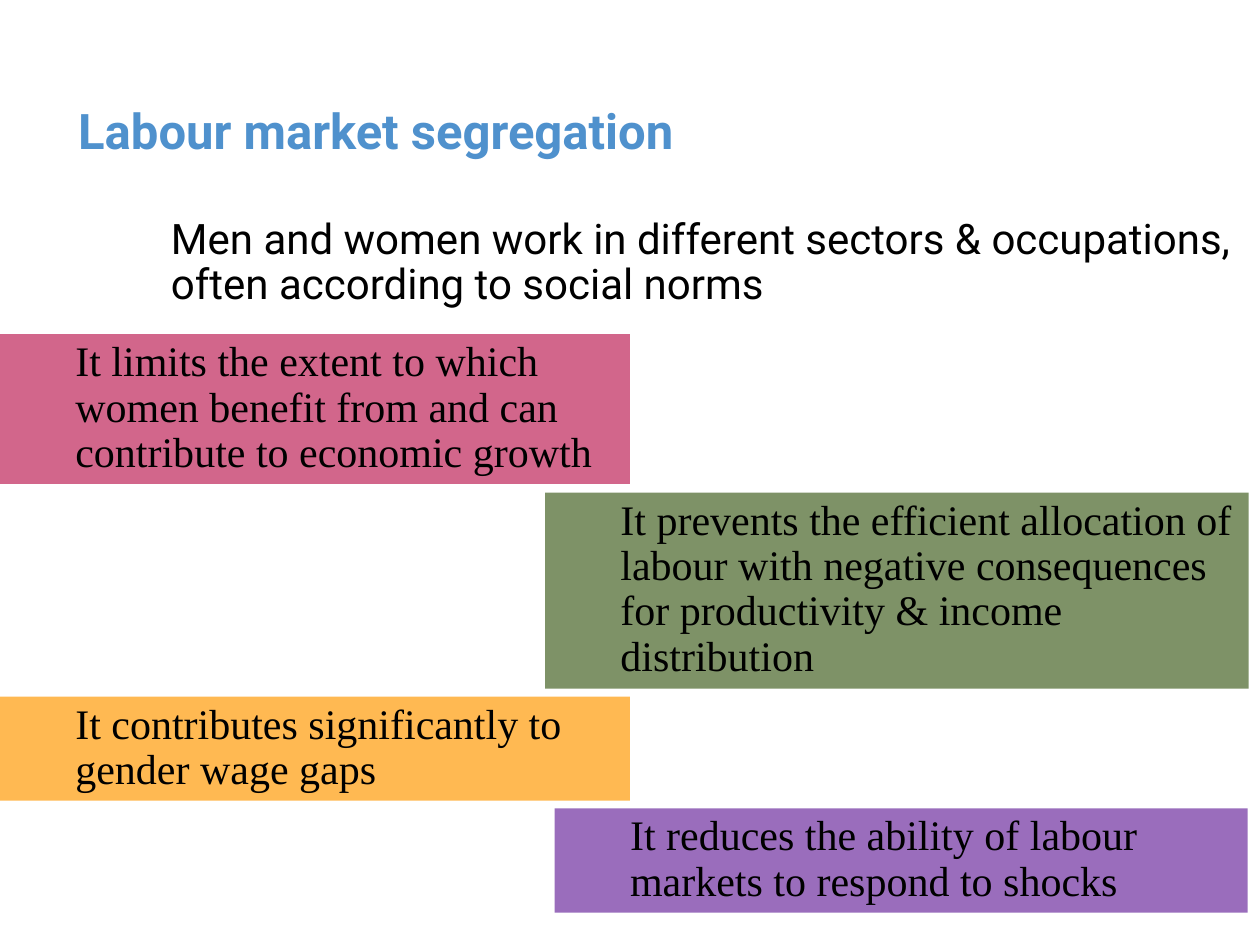
import pptx
import pptx.dml.color
import pptx.enum.shapes
import pptx.enum.text
import pptx.oxml.ns
import pptx.util
from lxml import etree

Pt = pptx.util.Pt
Anchor = pptx.enum.text.MSO_ANCHOR


def color(hex_string):
    return pptx.dml.color.RGBColor.from_string(hex_string)


def write_text(shape, text, font="Times New Roman", size=24, hex_color="000000",
               bold=False, level=0, left_margin=0, line_spacing=0.9,
               anchor=Anchor.TOP, auto_size=pptx.enum.text.MSO_AUTO_SIZE.NONE):
    frame = shape.text_frame
    frame.word_wrap = True
    frame.auto_size = auto_size
    frame.vertical_anchor = anchor
    paragraph = frame.paragraphs[0]
    paragraph.text = text
    paragraph.level = level
    paragraph.alignment = pptx.enum.text.PP_ALIGN.LEFT
    paragraph.line_spacing = line_spacing
    paragraph.space_before = Pt(0)
    properties = paragraph._p.get_or_add_pPr()
    properties.set("marL", str(Pt(left_margin)))
    properties.set("indent", "0")
    etree.SubElement(properties, pptx.oxml.ns.qn("a:buNone"))
    font_format = paragraph.runs[0].font
    font_format.name = font
    font_format.size = Pt(size)
    font_format.bold = bold
    font_format.color.rgb = color(hex_color)


presentation = pptx.Presentation()
presentation.slide_width = Pt(720)
presentation.slide_height = Pt(540)
slide = presentation.slides.add_slide(presentation.slide_layouts[1])

# Title
title = slide.shapes.title
title.left, title.top, title.width, title.height = Pt(37.5), Pt(29.5), Pt(648), Pt(90)
write_text(title, "Labour market segregation", font="Roboto", size=28,
           hex_color="4F91CD", bold=True, line_spacing=1.0, anchor=Anchor.MIDDLE)

# Introductory statement
body = slide.placeholders[1]
body.left, body.top, body.width, body.height = Pt(63.5), Pt(90.5), Pt(649.5), Pt(96)
body.text_frame.margin_top = Pt(34)
write_text(body, "Men and women work in different sectors & occupations, "
           "often according to social norms", font="Roboto", left_margin=27)

# Consequences, as translucent bands alternating left and right
bands = [
    (0, 191, 360, 85.5, "BB1850", 66,
     "It limits the extent to which women benefit from and can contribute to economic growth"),
    (311.5, 281.5, 402, 112, "486527", 70,
     "It prevents the efficient allocation of labour with negative consequences "
     "for productivity & income distribution"),
    (0, 398, 360, 59.5, "FF9900", 68,
     "It contributes significantly to gender wage gaps"),
    (317, 462, 396, 59.5, "7030A0", 70,
     "It reduces the ability of labour markets to respond to shocks"),
]
for left, top, width, height, fill_color, opacity, text in bands:
    band = slide.shapes.add_shape(pptx.enum.shapes.MSO_SHAPE.RECTANGLE,
                                  Pt(left), Pt(top), Pt(width), Pt(height))
    band.shadow.inherit = False
    band.line.fill.background()
    band.fill.solid()
    band.fill.fore_color.rgb = color(fill_color)
    fill_element = band._element.spPr.find(".//" + pptx.oxml.ns.qn("a:srgbClr"))
    etree.SubElement(fill_element, pptx.oxml.ns.qn("a:alpha"), val=str(opacity * 1000))
    write_text(band, text, level=1, left_margin=36,
               auto_size=pptx.enum.text.MSO_AUTO_SIZE.SHAPE_TO_FIT_TEXT)

presentation.save("out.pptx")
